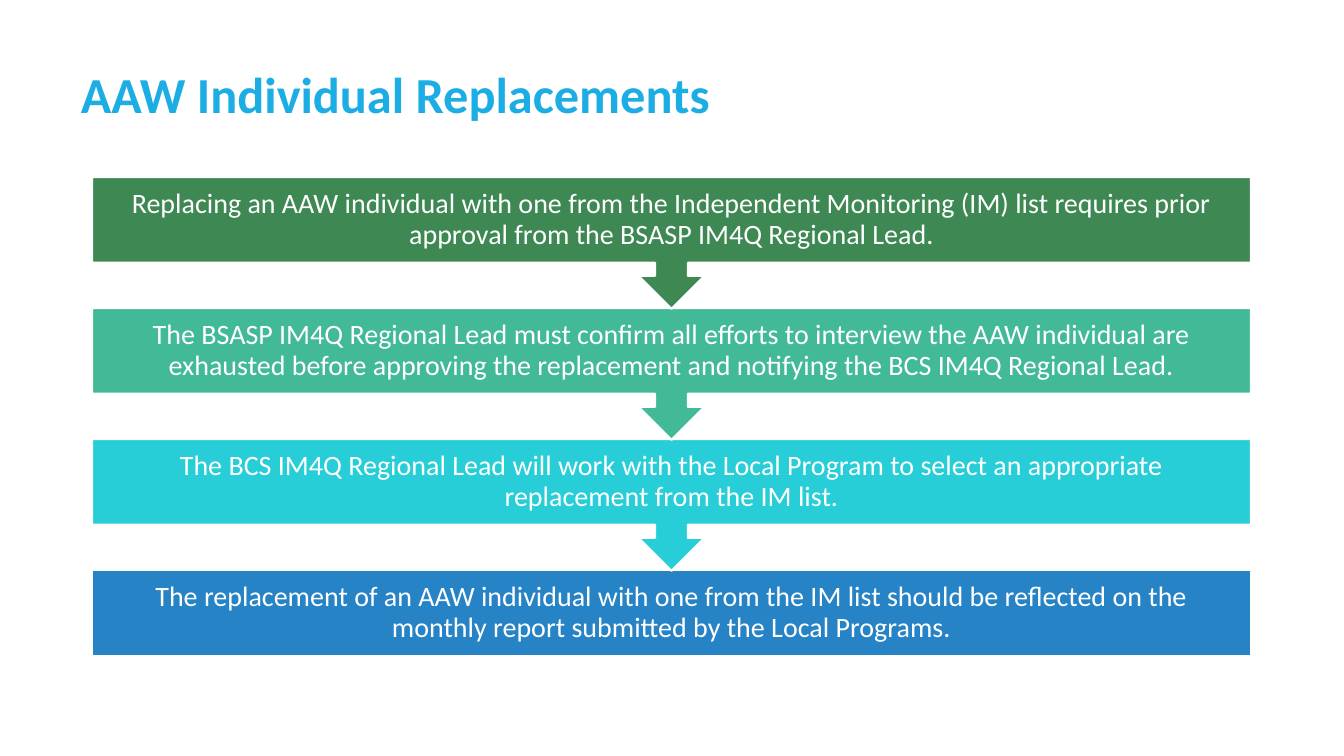
from dataclasses import dataclass

from pptx import Presentation
from pptx.dml.color import RGBColor
from pptx.enum.shapes import MSO_SHAPE
from pptx.enum.text import MSO_ANCHOR, PP_ALIGN
from pptx.shapes.autoshape import Shape
from pptx.slide import Slide
from pptx.util import Emu, Pt

RECT = MSO_SHAPE.RECTANGLE
CALLOUT = MSO_SHAPE.DOWN_ARROW_CALLOUT
MIDDLE = MSO_ANCHOR.MIDDLE
LEFT, CENTER = PP_ALIGN.LEFT, PP_ALIGN.CENTER

WIDTH, HEIGHT = 1344, 756
SCALE = 12192000 / WIDTH

STEP_LEFT, STEP_TOP, STEP_WIDTH = 92, 177, 1159
PITCH, BOX_HEIGHT, CALL_HEIGHT = 131, 86, 132
INSET = 16


@dataclass(frozen=True)
class Theme:
    font: str = "Calibri"
    title: str = "1CADE4"
    white: str = "FFFFFF"
    title_size: int = 36
    step_size: int = 20
    line: float = 1.5
    spacing: float = 0.9


@dataclass(frozen=True)
class Step:
    text: str
    fill: str


THEME = Theme()

STEPS = [
    Step("Replacing an AAW individual with one from the Independent Monitoring (IM) list "
         "requires prior approval from the BSASP IM4Q Regional Lead.", "3E8853"),
    Step("The BSASP IM4Q Regional Lead must confirm all efforts to interview the AAW "
         "individual are exhausted before approving the replacement and notifying the "
         "BCS IM4Q Regional Lead.", "42BA97"),
    Step("The BCS IM4Q Regional Lead will work with the Local Program to select an "
         "appropriate replacement from the IM list.", "27CED7"),
    Step("The replacement of an AAW individual with one from the IM list should be "
         "reflected on the monthly report submitted by the Local Programs.", "2683C6"),
]


def px(count: int) -> Emu:
    return Emu(round(count * SCALE))


def write(shape: Shape, text: str, size: int, color: str, align: PP_ALIGN,
          bold: bool = False) -> None:
    frame = shape.text_frame
    frame.word_wrap = True
    frame.vertical_anchor = MIDDLE
    para = frame.paragraphs[0]
    para.alignment = align
    para.line_spacing = THEME.spacing
    run = para.add_run()
    run.text = text
    run.font.name = THEME.font
    run.font.size = Pt(size)
    run.font.bold = bold
    run.font.color.rgb = RGBColor.from_string(color)


def add_title(slide: Slide, text: str) -> None:
    box = slide.shapes.add_textbox(px(71), px(35), px(1203), px(125))
    write(box, text, THEME.title_size, THEME.title, LEFT, bold=True)


def add_step(slide: Slide, index: int, step: Step) -> None:
    """Draw a step; all but the last point down to the next one."""
    last = index == len(STEPS) - 1
    kind, height = (RECT, BOX_HEIGHT) if last else (CALLOUT, CALL_HEIGHT)
    shape = slide.shapes.add_shape(
        kind, px(STEP_LEFT), px(STEP_TOP + index * PITCH), px(STEP_WIDTH), px(height))
    shape.shadow.inherit = False
    shape.fill.solid()
    shape.fill.fore_color.rgb = RGBColor.from_string(step.fill)
    shape.line.color.rgb = RGBColor.from_string(THEME.white)
    shape.line.width = Pt(THEME.line)
    frame = shape.text_frame
    frame.margin_left = frame.margin_right = px(INSET)
    frame.margin_top = frame.margin_bottom = px(INSET)
    write(shape, step.text, THEME.step_size, THEME.white, CENTER)


def main() -> None:
    deck = Presentation()
    deck.slide_width, deck.slide_height = px(WIDTH), px(HEIGHT)
    slide = deck.slides.add_slide(deck.slide_layouts[6])
    add_title(slide, "AAW Individual Replacements")
    # Bottom step first, so that each arrow tip lies over the box below.
    for index, step in reversed(list(enumerate(STEPS))):
        add_step(slide, index, step)
    deck.save("out.pptx")


if __name__ == "__main__":
    main()
